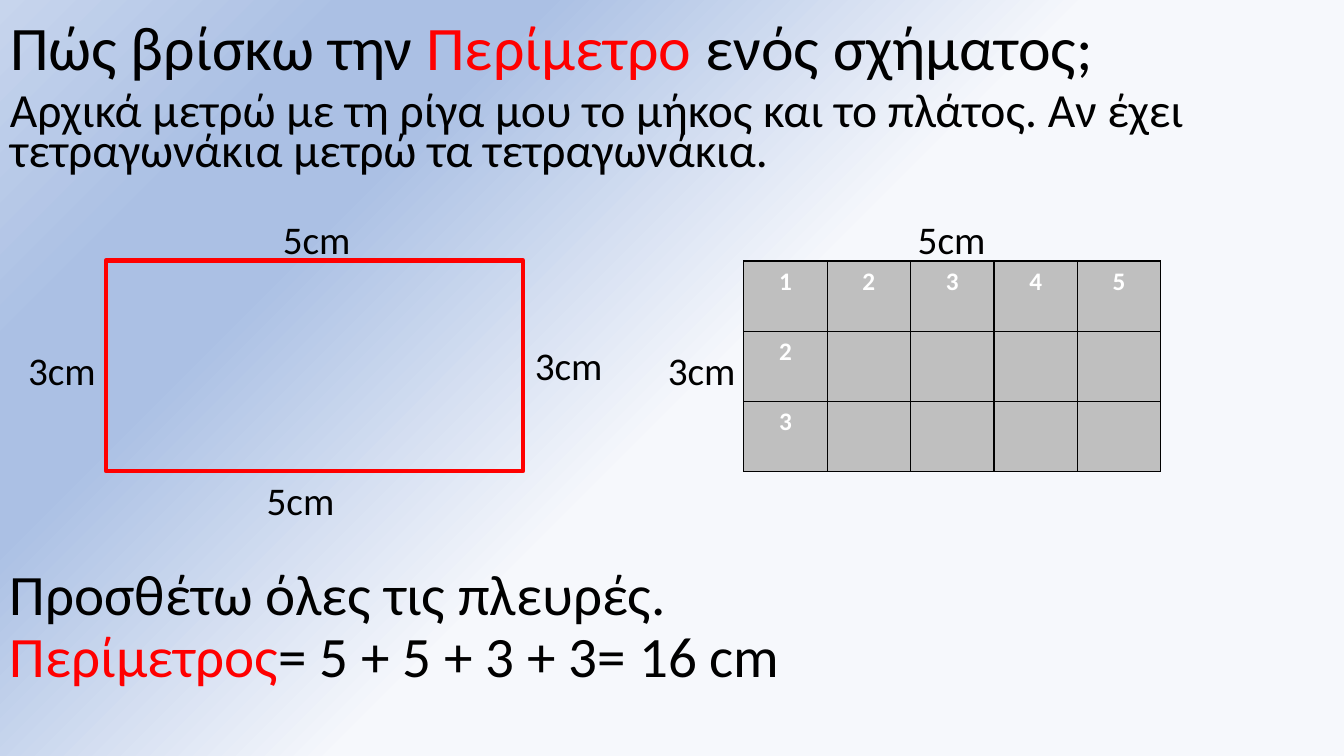
from lxml.etree import SubElement
from pptx import Presentation
from pptx.dml.color import RGBColor
from pptx.enum.shapes import MSO_SHAPE
from pptx.enum.text import MSO_ANCHOR, PP_ALIGN
from pptx.oxml import parse_xml
from pptx.oxml.ns import nsdecls, qn
from pptx.util import Pt

BLACK = RGBColor(0x00, 0x00, 0x00)
RED = RGBColor(0xFF, 0x00, 0x00)
WHITE = RGBColor(0xFF, 0xFF, 0xFF)
GREY = RGBColor(0xBF, 0xBF, 0xBF)
PALE = RGBColor(0xF6, 0xF8, 0xFC)
BLUE = RGBColor(0xAB, 0xC0, 0xE4)
LIGHT_BLUE = RGBColor(0xC7, 0xD5, 0xED)

FONT = "Calibri"
BACKGROUND_STOPS = [(48, PALE), (74, BLUE), (83, BLUE), (100, LIGHT_BLUE)]
SIDE_LABELS = [
    ("5cm", 202, 153.5), ("5cm", 655.5, 153.5),
    ("3cm", 20, 247), ("3cm", 477, 247),
    ("3cm", 382, 244), ("5cm", 190.5, 340.5),
]
GRID = [["1", "2", "3", "4", "5"], ["2", "", "", "", ""], ["3", "", "", "", ""]]


def set_background(page):
    """Fill the page with a gradient that spreads from the bottom right corner."""
    stops = "".join(
        f'<a:gs pos="{position * 1000}"><a:srgbClr val="{color}"/></a:gs>'
        for position, color in BACKGROUND_STOPS)
    background = parse_xml(
        f'<p:bg {nsdecls("p", "a")}><p:bgPr><a:gradFill rotWithShape="1">'
        f'<a:gsLst>{stops}</a:gsLst><a:path path="circle">'
        '<a:fillToRect l="100000" t="100000"/></a:path>'
        '<a:tileRect r="-100000" b="-100000"/></a:gradFill>'
        '<a:effectLst/></p:bgPr></p:bg>')
    page.element.cSld.insert(0, background)


def write(frame, paragraphs, size, color=BLACK, bold=False,
          align=PP_ALIGN.LEFT, line_spacing=1.0, gap=0):
    """Fill a frame; each paragraph is a list of (text, color or None) spans."""
    for index, spans in enumerate(paragraphs):
        para = frame.paragraphs[0] if index == 0 else frame.add_paragraph()
        para.alignment = align
        para.line_spacing = line_spacing
        para.space_before = Pt(gap if index else 0)
        for text, span_color in spans:
            span = para.add_run()
            span.text = text
            span.font.name = FONT
            span.font.size = Pt(size)
            span.font.bold = bold
            span.font.color.rgb = span_color or color


def set_frame(frame, side_margin):
    frame.word_wrap = True
    frame.vertical_anchor = MSO_ANCHOR.TOP
    frame.margin_left = frame.margin_right = Pt(side_margin)
    frame.margin_top = frame.margin_bottom = 0


def add_text(page, paragraphs, left, top, width, height, side_margin=7.2, **text_format):
    box = page.shapes.add_textbox(Pt(left), Pt(top), Pt(width), Pt(height))
    set_frame(box.text_frame, side_margin)
    write(box.text_frame, paragraphs, **text_format)


def add_title(page, spans):
    title = page.shapes.title
    title.left, title.top, title.width, title.height = Pt(0), Pt(6.5), Pt(960), Pt(56)
    set_frame(title.text_frame, 7.2)
    write(title.text_frame, [spans], size=44.2)


def add_outline(page, left, top, width, height):
    rectangle = page.shapes.add_shape(
        MSO_SHAPE.RECTANGLE, Pt(left), Pt(top), Pt(width), Pt(height))
    rectangle.shadow.inherit = False
    rectangle.fill.background()
    rectangle.line.color.rgb = RED
    rectangle.line.width = Pt(3)


def set_borders(cell):
    properties = cell._tc.get_or_add_tcPr()
    for index, side in enumerate(("lnL", "lnR", "lnT", "lnB")):
        border = parse_xml(
            f'<a:{side} {nsdecls("a")} w="{Pt(1)}"/>')
        fill = SubElement(border, qn("a:solidFill"))
        SubElement(fill, qn("a:srgbClr"), val=str(BLACK))
        properties.insert(index, border)


def add_grid(page, left, top, cell_width, cell_height):
    row_count, column_count = len(GRID), len(GRID[0])
    table = page.shapes.add_table(
        row_count, column_count, Pt(left), Pt(top),
        Pt(cell_width * column_count), Pt(cell_height * row_count)).table
    for column in table.columns:
        column.width = Pt(cell_width)
    for row, texts in zip(table.rows, GRID):
        row.height = Pt(cell_height)
        for cell, text in zip(row.cells, texts):
            cell.fill.solid()
            cell.fill.fore_color.rgb = GREY
            set_borders(cell)
            if text:
                write(cell.text_frame, [[(text, None)]], size=18, color=WHITE,
                      bold=True, align=PP_ALIGN.CENTER)


def main():
    deck = Presentation()
    deck.slide_width, deck.slide_height = Pt(960), Pt(540)
    page = deck.slides.add_slide(deck.slide_layouts[5])
    set_background(page)

    add_title(page, [("Πώς βρίσκω την ", None), ("Περίμετρο ", RED),
                     ("ενός σχήματος;", None)])
    add_text(page, [[("Αρχικά μετρώ με τη ρίγα μου το μήκος και το πλάτος. "
                      "Αν έχει τετραγωνάκια μετρώ τα τετραγωνάκια.", None)]],
             0, 68.5, 960, 62, size=34, line_spacing=0.7)

    add_outline(page, 75.6, 186, 298, 150.5)
    add_grid(page, 531.2, 186.5, 59.6, 50.2)
    for text, left, top in SIDE_LABELS:
        add_text(page, [[(text, None)]], left, top, 60, 34, side_margin=0, size=28)

    add_text(page, [[("Προσθέτω όλες τις πλευρές.", None)],
                    [("Περίμετρος", RED), ("= 5 + 5 + 3 + 3= 16 cm", None)]],
             0, 412, 960, 82, size=40.8, line_spacing=0.7, gap=10)

    deck.save("out.pptx")


if __name__ == "__main__":
    main()
